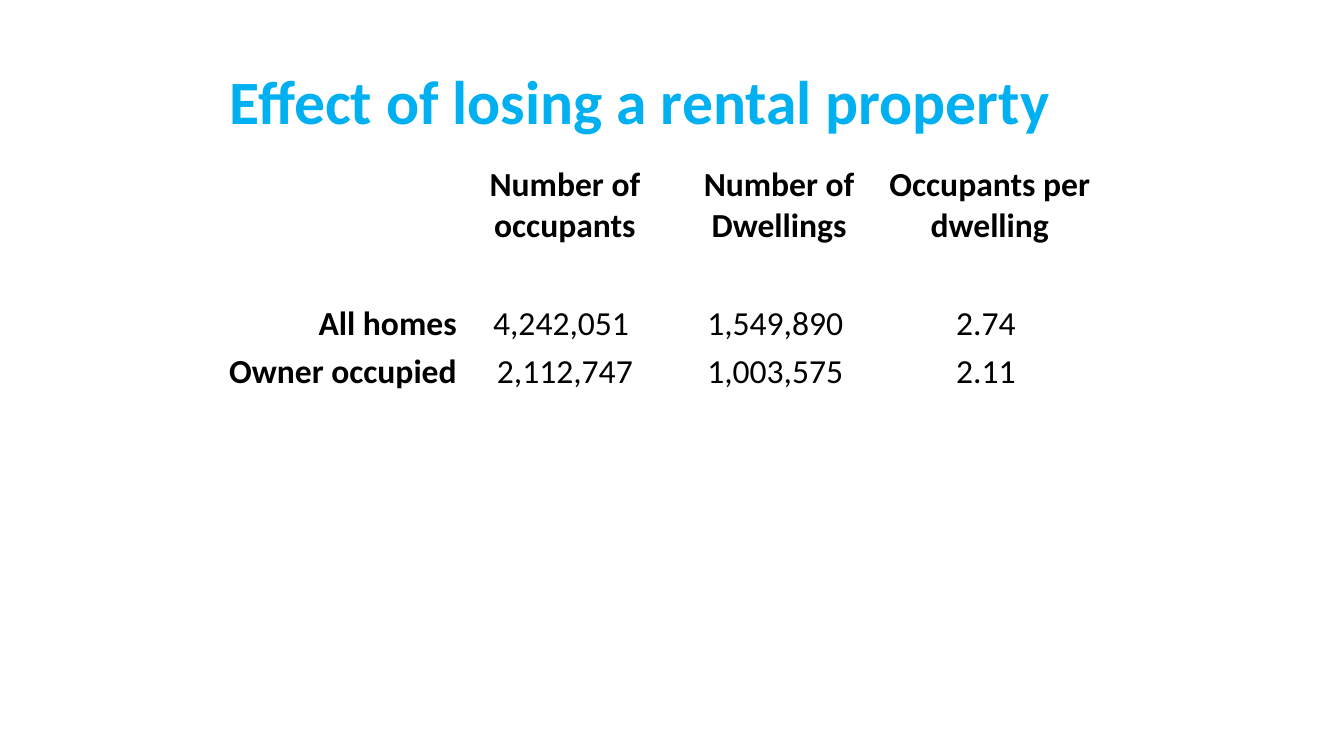
"""Build the slide on occupants per dwelling when a rental property is lost."""
import pptx
import pptx.dml.color
import pptx.enum.text
import pptx.util

Pt = pptx.util.Pt
RGB = pptx.dml.color.RGBColor
ALIGN = pptx.enum.text.PP_ALIGN
ANCHOR = pptx.enum.text.MSO_ANCHOR

THEME = {
    "font": "Calibri",
    "heading": {"size": Pt(44), "color": RGB(0x00, 0xB0, 0xF0)},
    "body": {"size": Pt(24), "color": RGB(0x00, 0x00, 0x00)},
}
LEFT = 157


def add_run(paragraph, text, style, bold):
    run = paragraph.add_run()
    run.text = text
    run.font.name = THEME["font"]
    run.font.size = THEME[style]["size"]
    run.font.color.rgb = THEME[style]["color"]
    run.font.bold = bold


deck = pptx.Presentation()
deck.slide_width, deck.slide_height = Pt(960), Pt(540)
slide = deck.slides.add_slide(deck.slide_layouts[5])

heading = slide.shapes.title
heading.left, heading.top, heading.width, heading.height = Pt(LEFT), Pt(26), Pt(648), Pt(90)
heading.text_frame.vertical_anchor = ANCHOR.MIDDLE
heading_line = heading.text_frame.paragraphs[0]
heading_line.alignment = ALIGN.LEFT
add_run(heading_line, "Effect of losing a rental property", "heading", True)

occupancy = [
    ["", "Number of occupants", "Number of Dwellings", "Occupants per dwelling"],
    ["All homes", "4,242,051 ", "1,549,890 ", "2.74 "],
    ["Owner occupied", "2,112,747", "1,003,575 ", "2.11 "],
    ["", "", "", ""],
]
column_widths = [170, 153, 153, 148]
row_heights = [68, 62, 34, 34]

homes = slide.shapes.add_table(
    len(row_heights), len(column_widths), Pt(LEFT), Pt(116.5),
    Pt(sum(column_widths)), Pt(sum(row_heights)),
).table
homes.first_row = homes.horz_banding = False
for column, width in zip(homes.columns, column_widths):
    column.width = Pt(width)
for row, height in zip(homes.rows, row_heights):
    row.height = Pt(height)

for row_index, entries in enumerate(occupancy):
    for column_index, entry in enumerate(entries):
        cell = homes.cell(row_index, column_index)
        cell.fill.background()
        cell.margin_left = cell.margin_right = cell.margin_top = Pt(0.75)
        cell.margin_bottom = Pt(0)
        cell.vertical_anchor = ANCHOR.BOTTOM if row_index else ANCHOR.TOP
        if entry:
            line = cell.text_frame.paragraphs[0]
            line.alignment = ALIGN.CENTER if column_index else ALIGN.RIGHT
            add_run(line, entry, "body", row_index == 0 or column_index == 0)

deck.save("out.pptx")
